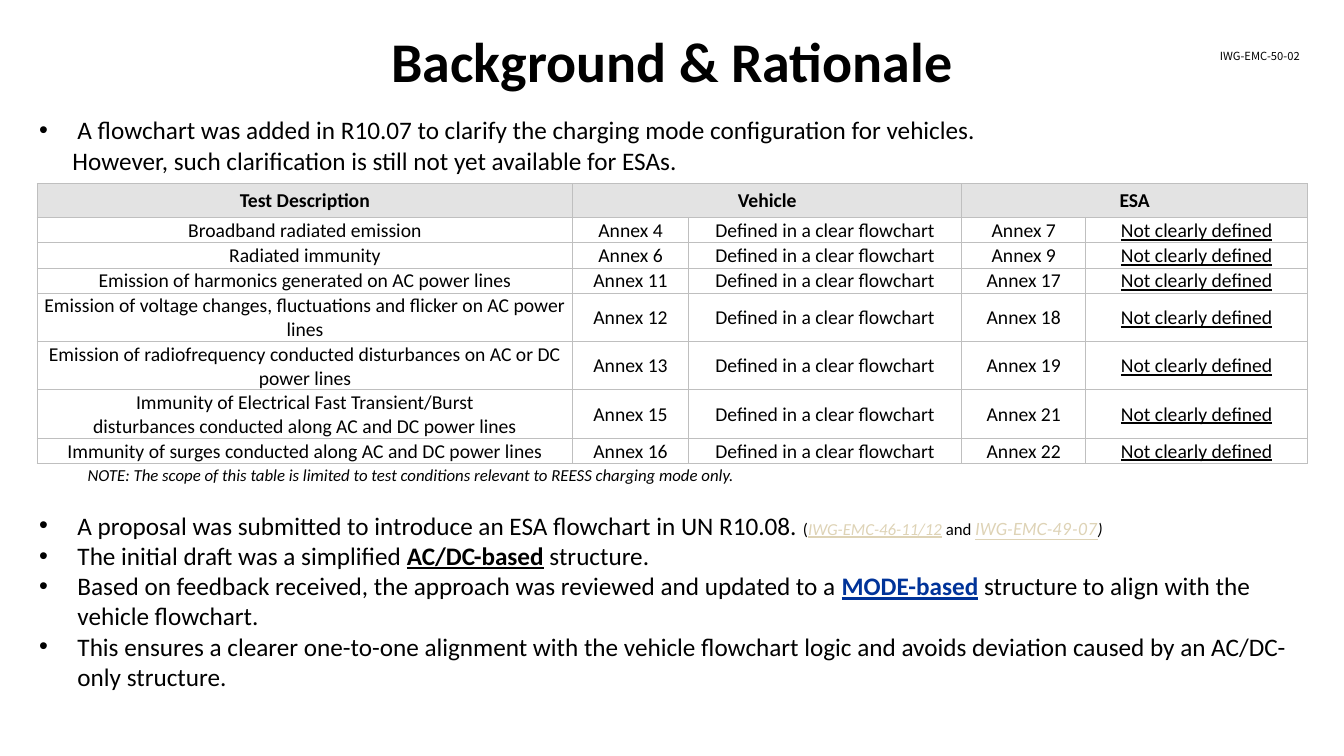
from lxml.etree import SubElement
from pptx import Presentation
from pptx.dml.color import RGBColor
from pptx.enum.text import MSO_ANCHOR, PP_ALIGN
from pptx.oxml.ns import qn
from pptx.util import Inches, Pt

COLORS = {"ink": "000000", "header": "E3E3E3", "border": "BFBFBF",
          "reference": "DED3B6", "mode": "003399"}


class SlideBuilder:
    font = "Calibri"
    indent = Inches(0.38)

    def __init__(self, deck):
        self.deck = deck
        self.page = deck.slides.add_slide(deck.slide_layouts[6])

    def across(self, percent):
        return round(self.deck.slide_width * percent / 100)

    def down(self, percent):
        return round(self.deck.slide_height * percent / 100)

    def place(self, left, top, width, height):
        return self.across(left), self.down(top), self.across(width), self.down(height)

    def span(self, para, text, size, color="ink", font=None, bold=False, italic=False, underline=False):
        span = para.add_run()
        span.text = text
        span.font.size = Pt(size)
        span.font.name = font or self.font
        span.font.bold = bold
        span.font.italic = italic
        span.font.underline = underline
        span.font.color.rgb = RGBColor.from_string(COLORS[color])

    def bullet(self, para):
        properties = para._p.get_or_add_pPr()
        properties.set("marL", str(self.indent))
        properties.set("indent", str(-self.indent))
        SubElement(properties, qn("a:buFont")).set("typeface", "Arial")
        SubElement(properties, qn("a:buChar")).set("char", "•")

    def paragraphs(self, frame, lines, size, align=PP_ALIGN.LEFT, **style):
        for index, line in enumerate(lines):
            para = frame.add_paragraph() if index else frame.paragraphs[0]
            para.alignment = align
            for text, changes in line:
                self.span(para, text, **{"size": size, **style, **changes})

    def text(self, area, lines, size, **style):
        box = self.page.shapes.add_textbox(*self.place(*area))
        box.text_frame.word_wrap = True
        self.paragraphs(box.text_frame, lines, size, **style)
        return box.text_frame.paragraphs

    def cell(self, cell, text, margin, fill=None, **style):
        cell.vertical_anchor = MSO_ANCHOR.MIDDLE
        cell.margin_left = cell.margin_right = cell.margin_top = Inches(margin)
        cell.margin_bottom = 0
        properties = cell._tc.get_or_add_tcPr()
        for side in ("lnL", "lnR", "lnT", "lnB"):
            line = SubElement(properties, qn(f"a:{side}"), w=str(Pt(0.75)))
            paint = SubElement(line, qn("a:solidFill"))
            SubElement(paint, qn("a:srgbClr")).set("val", COLORS["border"])
        if fill:
            cell.fill.solid()
            cell.fill.fore_color.rgb = RGBColor.from_string(COLORS[fill])
        else:
            cell.fill.background()
        lines = [[(line, {})] for line in text.split("\n")]
        self.paragraphs(cell.text_frame, lines, 14, align=PP_ALIGN.CENTER, **style)

    def table(self, left, top, columns, heights, headers, rows):
        area = self.place(left, top, sum(columns), sum(heights))
        table = self.page.shapes.add_table(len(heights), len(columns), *area).table
        table.horz_banding = False
        for column, width in zip(table.columns, columns):
            column.width = self.across(width)
        for row, height in zip(table.rows, heights):
            row.height = self.down(height)
        for index, text in enumerate(headers):
            self.cell(table.cell(0, index), text, 0, "header", bold=True)
        for first in (1, 3):
            table.cell(0, first).merge(table.cell(0, first + 1))
        for row_index, row in enumerate(rows, 1):
            for index, text in enumerate(row):
                self.cell(table.cell(row_index, index), text, 0.01, underline=index == 4)


TESTS = [
    ("Broadband radiated emission", 4, 7),
    ("Radiated immunity", 6, 9),
    ("Emission of harmonics generated on AC power lines", 11, 17),
    ("Emission of voltage changes, fluctuations and flicker on AC power lines", 12, 18),
    ("Emission of radiofrequency conducted disturbances on AC or DC power lines", 13, 19),
    ("Immunity of Electrical Fast Transient/Burst\n"
     "disturbances conducted along AC and DC power lines", 15, 21),
    ("Immunity of surges conducted along AC and DC power lines", 16, 22),
]
SINGLE, DOUBLE = 3.33, 6.4
SMALL = {"size": 12}
REFERENCE = {"size": 12, "color": "reference", "italic": True, "underline": True}
STRONG = {"bold": True, "underline": True}
INTRO = [
    [("A flowchart was added in R10.07 to clarify the charging mode configuration for vehicles.", {})],
    [("However, such clarification is still not yet available for ESAs.", {})],
]
RATIONALE = [
    [("A proposal was submitted to introduce an ESA flowchart in UN R10.08. ", {}),
     ("(", SMALL), ("IWG-EMC-46-11/12", REFERENCE), (" and ", SMALL),
     ("IWG-EMC-49-07", {**REFERENCE, "font": "Lato"}), (")", {**SMALL, "italic": True})],
    [("The initial draft was a simplified ", {}), ("AC/DC-based", STRONG), (" structure.", {})],
    [("Based on feedback received, the approach was reviewed and updated to a ", {}),
     ("MODE-based", {**STRONG, "color": "mode"}),
     (" structure to align with the vehicle flowchart.", {})],
    [("This ensures a clearer one-to-one alignment with the vehicle flowchart logic and avoids "
      "deviation caused by an AC/DC-only structure.", {})],
]


def main():
    deck = Presentation()
    deck.slide_width, deck.slide_height = Inches(13.33), Inches(7.5)
    slide = SlideBuilder(deck)
    slide.text((0, 2.8, 100, 6.27), [[("Background & Rationale", {})]], 40,
               align=PP_ALIGN.CENTER, bold=True)
    rows = [(name, f"Annex {vehicle}", "Defined in a clear flowchart",
             f"Annex {esa}", "Not clearly defined") for name, vehicle, esa in TESTS]
    slide.table(2.78, 24.27, [39.83, 8.63, 20.33, 9.23, 16.5],
                [4.53] + [SINGLE] * 3 + [DOUBLE] * 3 + [SINGLE],
                ["Test Description", "Vehicle", "", "ESA", ""], rows)
    note = "NOTE: The scope of this table is limited to test conditions relevant to REESS charging mode only."
    slide.text((5.78, 60.8, 56.64, 4), [[(note, {})]], 12, italic=True)
    claim, contrast = slide.text((2.18, 14.53, 94.83, 9.47), INTRO, 18)
    slide.bullet(claim)
    contrast._p.get_or_add_pPr().set("marL", str(Inches(0.33)))
    for para in slide.text((2.18, 66.8, 95.12, 25.6), RATIONALE, 18):
        slide.bullet(para)
    slide.text((83.28, 5.87, 14.18, 3.2), [[("IWG-EMC-50-02", {})]], 8,
               align=PP_ALIGN.RIGHT, font="Noto Sans CJK KR")
    deck.save("out.pptx")


if __name__ == "__main__":
    main()
